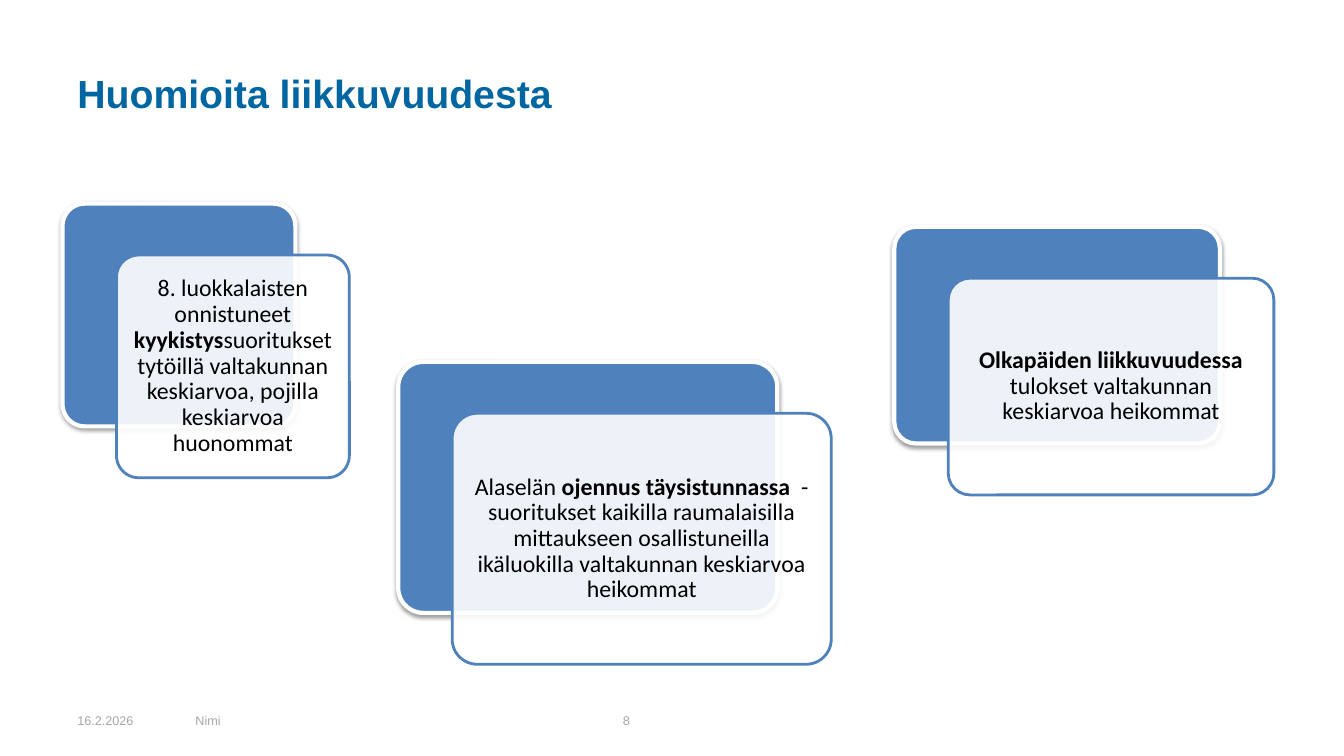
from lxml.etree import SubElement
from pptx import Presentation
from pptx.dml.color import RGBColor
from pptx.enum.shapes import MSO_SHAPE
from pptx.enum.text import MSO_ANCHOR, PP_ALIGN
from pptx.oxml.ns import qn
from pptx.util import Inches, Pt

BLUE = "4F81BD"
WHITE = "FFFFFF"
CARD_OFFSET = (0.535, 0.51)

FOOTERS = [
    ("16.2.2026", 0.67, 1.17),
    ("Nimi", 1.84, 4.22),
    ("8", 6.08, 3.11),
]

CARDS = [
    ((0.62, 2.02, 2.31, 2.21), [
        ("8. luokkalaisten onnistuneet ", False),
        ("kyykistys", True),
        ("suoritukset tytöillä valtakunnan keskiarvoa, pojilla keskiarvoa huonommat", False),
    ]),
    ((3.95, 3.59, 3.76, 2.49), [
        ("Alaselän ", False),
        ("ojennus täysistunnassa  ", True),
        ("- suoritukset kaikilla raumalaisilla mittaukseen osallistuneilla "
         "ikäluokilla valtakunnan keskiarvoa heikommat", False),
    ]),
    ((8.87, 2.25, 3.23, 2.15), [
        ("Olkapäiden liikkuvuudessa ", True),
        ("tulokset valtakunnan keskiarvoa heikommat", False),
    ]),
]


def color(value):
    return RGBColor.from_string(value)


def apply(target, values):
    for name, value in values.items():
        setattr(target, name, value)


class SlideBuilder:
    title_font = {"name": "Arial", "size": Pt(28), "bold": True}
    footer_font = {"name": "Arial", "size": Pt(9)}
    card_font = {"name": "Calibri", "size": Pt(17)}
    card_frame = {
        "word_wrap": True,
        "vertical_anchor": MSO_ANCHOR.MIDDLE,
        **{f"margin_{side}": Inches(0.07) for side in ("left", "top", "right", "bottom")},
    }
    card_para = {"alignment": PP_ALIGN.CENTER, "line_spacing": 0.9}

    def __init__(self, slide):
        self.slide = slide

    def add_span(self, para, text, font, hex_color, bold=False):
        span = para.add_run()
        span.text = text
        apply(span.font, {"bold": bold, **font})
        span.font.color.rgb = color(hex_color)

    def label(self, text, bounds, font, hex_color):
        box = self.slide.shapes.add_textbox(*map(Inches, bounds))
        apply(box.text_frame, {"word_wrap": True, "vertical_anchor": MSO_ANCHOR.MIDDLE})
        self.add_span(box.text_frame.paragraphs[0], text, font, hex_color)

    def rounded(self, bounds, fill, line, width):
        shape = self.slide.shapes.add_shape(MSO_SHAPE.ROUNDED_RECTANGLE, *map(Inches, bounds))
        shape.adjustments[0] = 0.1
        shape.shadow.inherit = False
        shape.fill.solid()
        shape.fill.fore_color.rgb = color(fill)
        shape.line.color.rgb = color(line)
        shape.line.width = Pt(width)
        return shape

    def add_alpha(self, color_element, percent):
        SubElement(color_element, qn("a:alpha"), val=str(percent * 1000))

    def cast_shadow(self, shape):
        effects = shape.element.spPr.find(qn("a:effectLst"))
        shadow = SubElement(
            effects, qn("a:outerShdw"), blurRad=str(Pt(3.1)), dist=str(Pt(1.6)),
            dir=str(90 * 60000), rotWithShape="0")
        self.add_alpha(SubElement(shadow, qn("a:srgbClr"), val="000000"), 38)

    def card(self, bounds, spans):
        left, top, width, height = bounds
        self.cast_shadow(self.rounded(bounds, BLUE, WHITE, 3))
        front_bounds = (left + CARD_OFFSET[0], top + CARD_OFFSET[1], width, height)
        front = self.rounded(front_bounds, WHITE, BLUE, 2)
        self.add_alpha(front.element.spPr.find(qn("a:solidFill"))[0], 90)
        apply(front.text_frame, self.card_frame)
        para = front.text_frame.paragraphs[0]
        apply(para, self.card_para)
        for text, bold in spans:
            self.add_span(para, text, self.card_font, "000000", bold)


def main():
    deck = Presentation()
    apply(deck, {"slide_width": Inches(13.33), "slide_height": Inches(7.5)})
    page = SlideBuilder(deck.slides.add_slide(deck.slide_layouts[6]))
    page.label("Huomioita liikkuvuudesta", (0.67, 0.3, 12, 1.25), page.title_font, "0066A1")
    for text, left, width in FOOTERS:
        page.label(text, (left, 6.95, width, 0.4), page.footer_font, "A6A6A6")
    for bounds, spans in CARDS:
        page.card(bounds, spans)
    deck.save("out.pptx")


if __name__ == "__main__":
    main()
